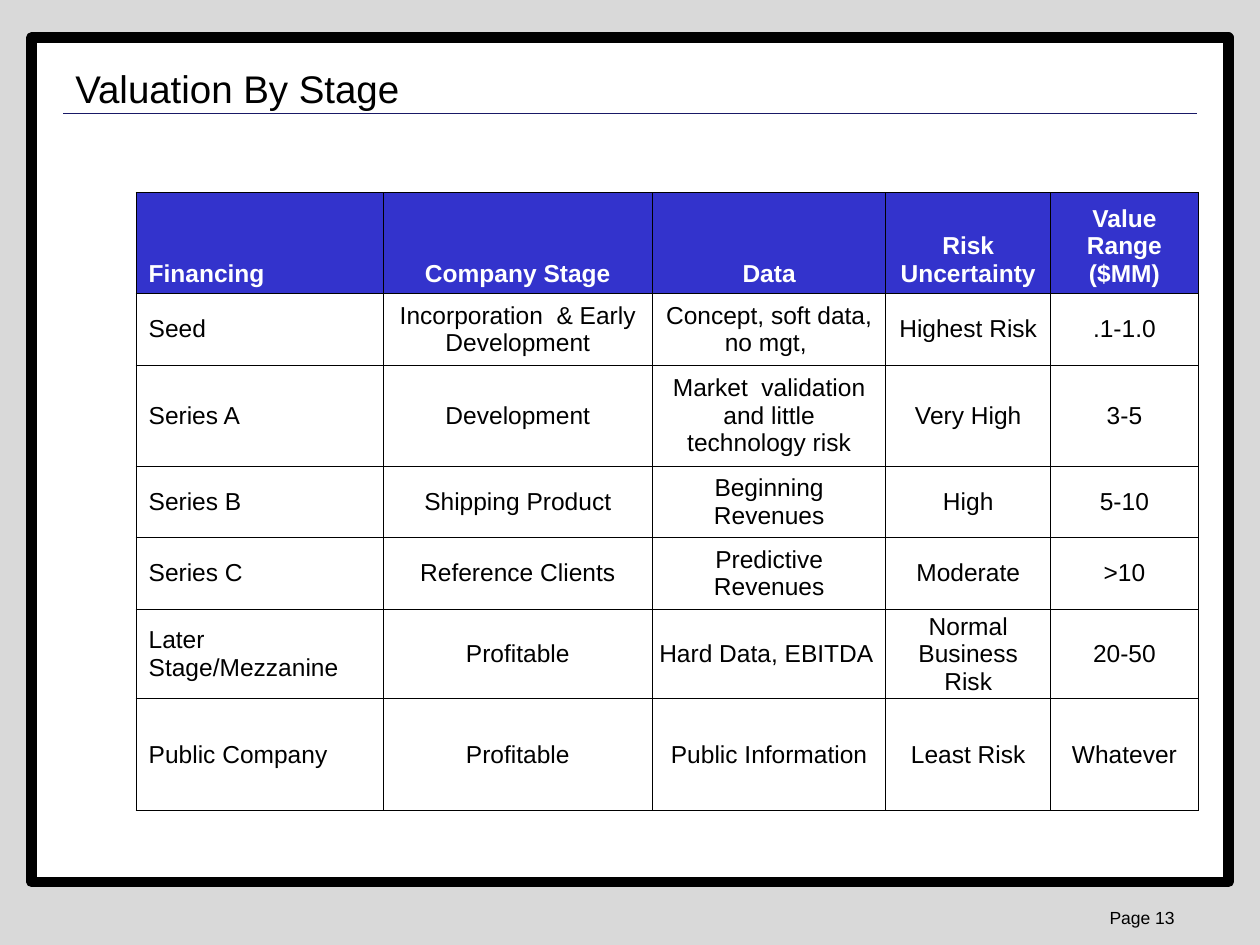
from dataclasses import dataclass

from lxml.etree import SubElement
from pptx import Presentation
from pptx.dml.color import RGBColor
from pptx.enum.shapes import MSO_CONNECTOR as Connector, MSO_SHAPE as Shape
from pptx.enum.text import MSO_ANCHOR as Anchor, PP_ALIGN as Align
from pptx.oxml.ns import qn
from pptx.util import Inches, Pt

BLACK = RGBColor(0x00, 0x00, 0x00)
WHITE = RGBColor(0xFF, 0xFF, 0xFF)
GREY = RGBColor(0xD9, 0xD9, 0xD9)
NAVY = RGBColor(0x19, 0x19, 0x66)
BLUE = RGBColor(0x33, 0x33, 0xCC)

# The slide is a grid of 40 columns and 30 rows of quarter inches
GRID_COLUMNS, GRID_ROWS = 40, 30
FIRST_TIGHT_ROW = 5  # from this row on, centred cells have almost no margins


@dataclass(frozen=True)
class Box:
    """A rectangle in grid columns and rows."""
    left: float
    top: float
    width: float
    height: float

    def lengths(self) -> list[int]:
        return [grid(value) for value in (self.left, self.top, self.width, self.height)]


@dataclass(frozen=True)
class Stage:
    """One table row; a line break starts a new paragraph."""
    height: float
    texts: tuple[str, ...]


COLUMN_WIDTHS = (7.84, 8.56, 7.4, 5.24, 4.68)
STAGES = (
    Stage(3.08, ("Financing", "Company Stage", "Data", "Risk\nUncertainty", "Value Range\n($MM)")),
    Stage(2.16, ("Seed", "Incorporation  & Early Development",
                 "Concept, soft data, no mgt, ", "Highest Risk", ".1-1.0")),
    Stage(3.08, ("Series A", "Development",
                 "Market  validation and little technology risk", "Very High", "3-5")),
    Stage(2.16, ("Series B", "Shipping Product", "Beginning Revenues", "High", "5-10")),
    Stage(2.16, ("Series C", "Reference Clients", "Predictive Revenues", "Moderate", ">10")),
    Stage(2.72, ("Later Stage/Mezzanine", "Profitable", "Hard Data, EBITDA ",
                 "Normal Business\nRisk", "20-50")),
    Stage(3.56, ("Public Company", "Profitable", "Public Information", "Least Risk", "Whatever")),
)


def grid(units: float) -> int:
    return Inches(units / 4)


def style_text(text_frame, size: float, color: RGBColor, align, bold: bool = False) -> None:
    for paragraph in text_frame.paragraphs:
        paragraph.alignment = align
        font = paragraph.font
        font.name, font.size, font.bold = "Arial", Pt(size), bold
        font.color.rgb = color


def add_text(slide, box: Box, text: str, size: float, align, anchor) -> None:
    text_frame = slide.shapes.add_textbox(*box.lengths()).text_frame
    text_frame.word_wrap = True
    text_frame.vertical_anchor = anchor
    text_frame.text = text
    style_text(text_frame, size, BLACK, align)


def add_frame(slide, box: Box) -> None:
    frame = slide.shapes.add_shape(Shape.RECTANGLE, *box.lengths())
    frame.shadow.inherit = False
    frame.fill.solid()
    frame.fill.fore_color.rgb = WHITE
    frame.line.color.rgb = BLACK
    frame.line.width = Pt(6)


def add_rule(slide, left: float, right: float, top: float) -> None:
    rule = slide.shapes.add_connector(
        Connector.STRAIGHT, grid(left), grid(top), grid(right), grid(top))
    rule.line.color.rgb = NAVY
    rule.line.width = Pt(1)
    SubElement(rule._element.spPr, qn("a:effectLst"))


def add_borders(cell) -> None:
    properties = cell._tc.get_or_add_tcPr()
    for position, side in enumerate(("lnL", "lnR", "lnT", "lnB")):
        border = SubElement(properties, qn(f"a:{side}"), w=str(Pt(0.5)))
        fill = SubElement(border, qn("a:solidFill"))
        SubElement(fill, qn("a:srgbClr"), val=str(BLACK))
        properties.insert(position, border)  # borders come before the fill


def fill_cell(cell, text: str, row: int, column: int) -> None:
    is_header = row == 0
    cell.text_frame.text = text
    cell.vertical_anchor = Anchor.BOTTOM if is_header else Anchor.MIDDLE
    if is_header:
        cell.fill.solid()
        cell.fill.fore_color.rgb = BLUE
    else:
        cell.fill.background()
    if row >= FIRST_TIGHT_ROW and column > 0:
        cell.margin_left = cell.margin_right = cell.margin_top = Inches(0.01)
        cell.margin_bottom = 0
    style_text(cell.text_frame, 14, WHITE if is_header else BLACK,
               Align.CENTER if column else Align.LEFT, is_header)
    add_borders(cell)


def add_stage_table(slide, left: float, top: float) -> None:
    box = Box(left, top, sum(COLUMN_WIDTHS), sum(stage.height for stage in STAGES))
    table = slide.shapes.add_table(len(STAGES), len(COLUMN_WIDTHS), *box.lengths()).table
    table.horz_banding = False
    for column, width in zip(table.columns, COLUMN_WIDTHS):
        column.width = grid(width)
    for row, stage in enumerate(STAGES):
        table.rows[row].height = grid(stage.height)
        for column, text in enumerate(stage.texts):
            fill_cell(table.cell(row, column), text, row, column)


def main() -> None:
    presentation = Presentation()
    presentation.slide_width = grid(GRID_COLUMNS)
    presentation.slide_height = grid(GRID_ROWS)
    slide = presentation.slides.add_slide(presentation.slide_layouts[6])

    # Background, framed page and page number
    slide.background.fill.solid()
    slide.background.fill.fore_color.rgb = GREY
    add_frame(slide, Box(1, 1.2, 38, 26.8))
    add_text(slide, Box(33.04, 28.6, 4.64, 1.08), "Page 13", 10, Align.RIGHT, Anchor.TOP)

    # Title rule, table and title
    add_rule(slide, 2, 38, 3.6)
    add_stage_table(slide, 4.32, 6.12)
    add_text(slide, Box(2, 1.8, 36, 2), "Valuation By Stage", 22, Align.LEFT, Anchor.MIDDLE)

    presentation.save("out.pptx")


if __name__ == "__main__":
    main()
